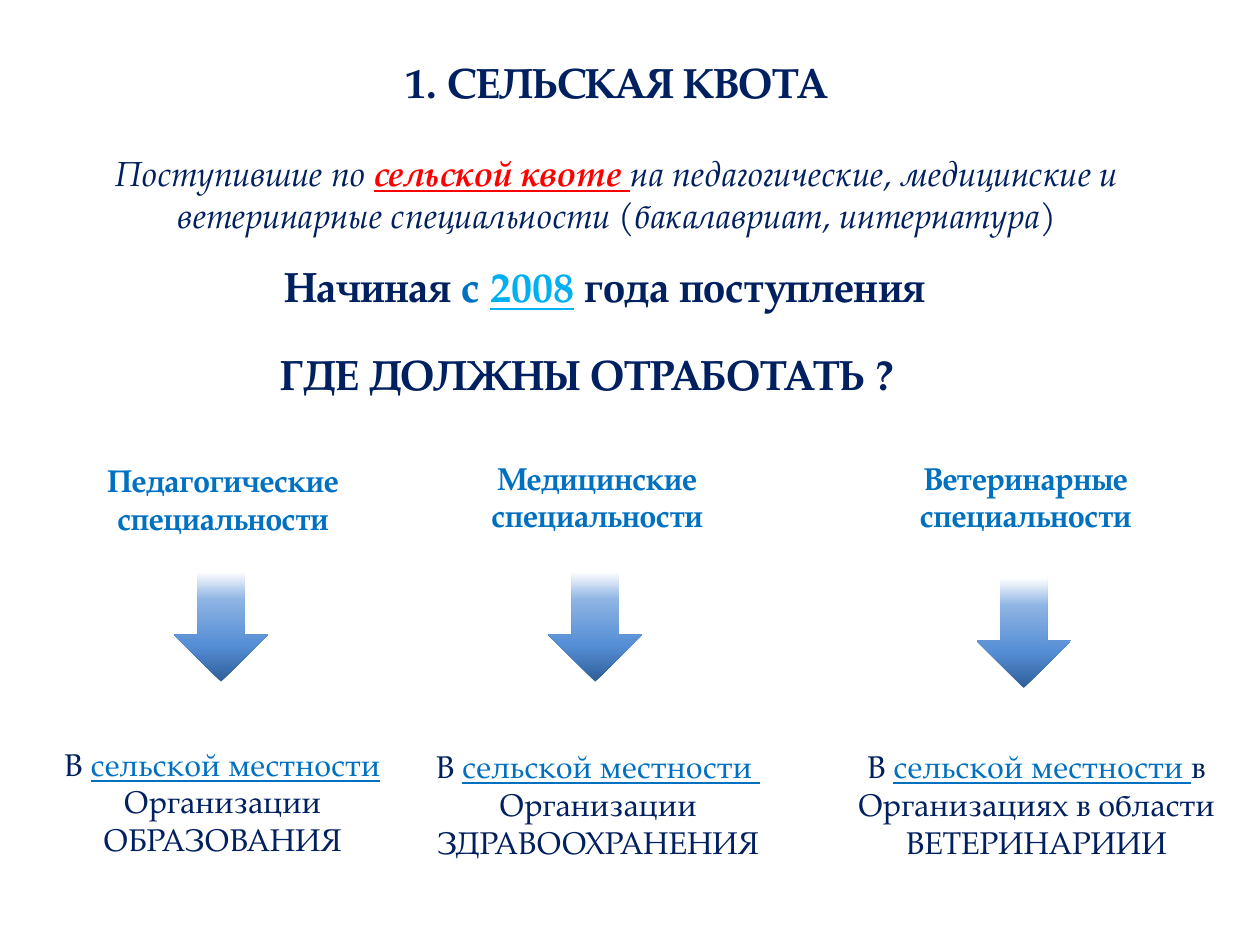
"""Build a slide on the rural quota and where its graduates must work."""
from copy import deepcopy

from pptx import Presentation
from pptx.dml.color import RGBColor
from pptx.enum import shapes, text
from pptx.oxml.ns import qn
from pptx.util import Inches, Pt

FONT = "TeX Gyre Pagella"
COLORS = {"navy": "002060", "blue": "0070C0", "sky": "00B0F0", "red": "FF0000"}
GRADIENT = [(0, "2F5F99"), (0.33, "558ED5"), (0.75, "8EB4E3"), (1, "FFFFFF")]
ARROW_SIZE = (0.75, 0.87)

# Runs are (text, colour, style letters: b bold, i italic, u underline).
TITLE = [("1. СЕЛЬСКАЯ КВОТА", "navy", "b")]
INTRO = [
    ("Поступившие по ", "navy", "i"),
    ("сельской квоте ", "red", "biu"),
    ("на педагогические, медицинские и ветеринарные специальности "
     "(бакалавриат, интернатура)", "navy", "i"),
]
SINCE = [
    ("Начиная", "navy", "b"),
    (" с ", "blue", "b"),
    ("2008", "sky", "bu"),
    (" ", "sky", "b"),
    ("года поступления", "navy", "b"),
]
QUESTION = [("ГДЕ ДОЛЖНЫ ОТРАБОТАТЬ ?", "navy", "b")]
COLUMNS = [
    {"heading": "Педагогические специальности", "heading_at": (0.51, 3.61),
     "arrow_at": (1.38, 4.54), "place_box": (0.35, 5.86, 2.83, 1.01),
     "break": False, "place": "Организации ОБРАЗОВАНИЯ"},
    {"heading": "Медицинские специальности", "heading_at": (3.48, 3.59),
     "arrow_at": (4.35, 4.54), "place_box": (3.29, 5.88, 2.91, 1.01),
     "break": True, "place": "Организации ЗДРАВООХРАНЕНИЯ"},
    {"heading": "Ветеринарные специальности", "heading_at": (6.88, 3.59),
     "arrow_at": (7.75, 4.59), "place_box": (6.53, 5.88, 3.39, 1.01),
     "break": False, "place": "в Организациях в области ВЕТЕРИНАРИИИ"},
]


def add_runs(paragraph, runs, size):
    for content, color, style in runs:
        if content == "\n":
            paragraph.add_line_break()
            continue
        run = paragraph.add_run()
        run.text = content
        font = run.font
        font.name, font.size = FONT, Pt(size)
        font.color.rgb = RGBColor.from_string(COLORS[color])
        font.bold, font.italic, font.underline = (letter in style for letter in "biu")


def add_text(slide, box, runs, size, centered=True):
    frame = slide.shapes.add_textbox(*map(Inches, box)).text_frame
    frame.word_wrap = centered
    frame.auto_size = text.MSO_AUTO_SIZE.SHAPE_TO_FIT_TEXT
    paragraph = frame.paragraphs[0]
    paragraph.alignment = text.PP_ALIGN.CENTER if centered else text.PP_ALIGN.LEFT
    add_runs(paragraph, runs, size)


def add_title(slide):
    title = slide.shapes.title
    title.left, title.top, title.width, title.height = map(Inches, (2.96, 0.4, 3.87, 0.5))
    frame = title.text_frame
    frame.auto_size = text.MSO_AUTO_SIZE.SHAPE_TO_FIT_TEXT
    frame.vertical_anchor = text.MSO_ANCHOR.MIDDLE
    frame.paragraphs[0].alignment = text.PP_ALIGN.CENTER
    add_runs(frame.paragraphs[0], TITLE, 24)


def add_arrow(slide, position):
    shape = slide.shapes.add_shape(
        shapes.MSO_SHAPE.DOWN_ARROW, *map(Inches, position + ARROW_SIZE))
    shape.shadow.inherit = False
    shape.line.fill.background()
    shape.fill.gradient()
    shape.fill.gradient_angle = 90
    stop_list = shape._element.spPr.find(qn("a:gradFill")).find(qn("a:gsLst"))
    while len(stop_list) < len(GRADIENT):
        stop_list.append(deepcopy(stop_list[0]))
    for stop, (position, color) in zip(shape.fill.gradient_stops, GRADIENT):
        stop.position = position
        stop.color.rgb = RGBColor.from_string(color)


def add_column(slide, column):
    add_text(slide, column["heading_at"] + (2.52, 0.71),
             [(column["heading"], "blue", "b")], 18)
    add_arrow(slide, column["arrow_at"])
    runs = [("В ", "navy", ""), ("сельской местности ", "blue", "u")]
    if column["break"]:
        runs.append(("\n", "blue", "u"))
    add_text(slide, column["place_box"], runs + [(column["place"], "navy", "")], 18)


def main():
    presentation = Presentation()
    presentation.slide_width, presentation.slide_height = Inches(10), Inches(7.5)
    slide = presentation.slides.add_slide(presentation.slide_layouts[5])
    add_title(slide)
    add_text(slide, (0.68, 1.15, 8.43, 0.77), INTRO, 20)
    add_text(slide, (2.16, 2.02, 5.69, 0.5), SINCE, 24, centered=False)
    add_text(slide, (2.13, 2.72, 5.51, 0.5), QUESTION, 24, centered=False)
    for column in COLUMNS:
        add_column(slide, column)
    presentation.save("out.pptx")


if __name__ == "__main__":
    main()
